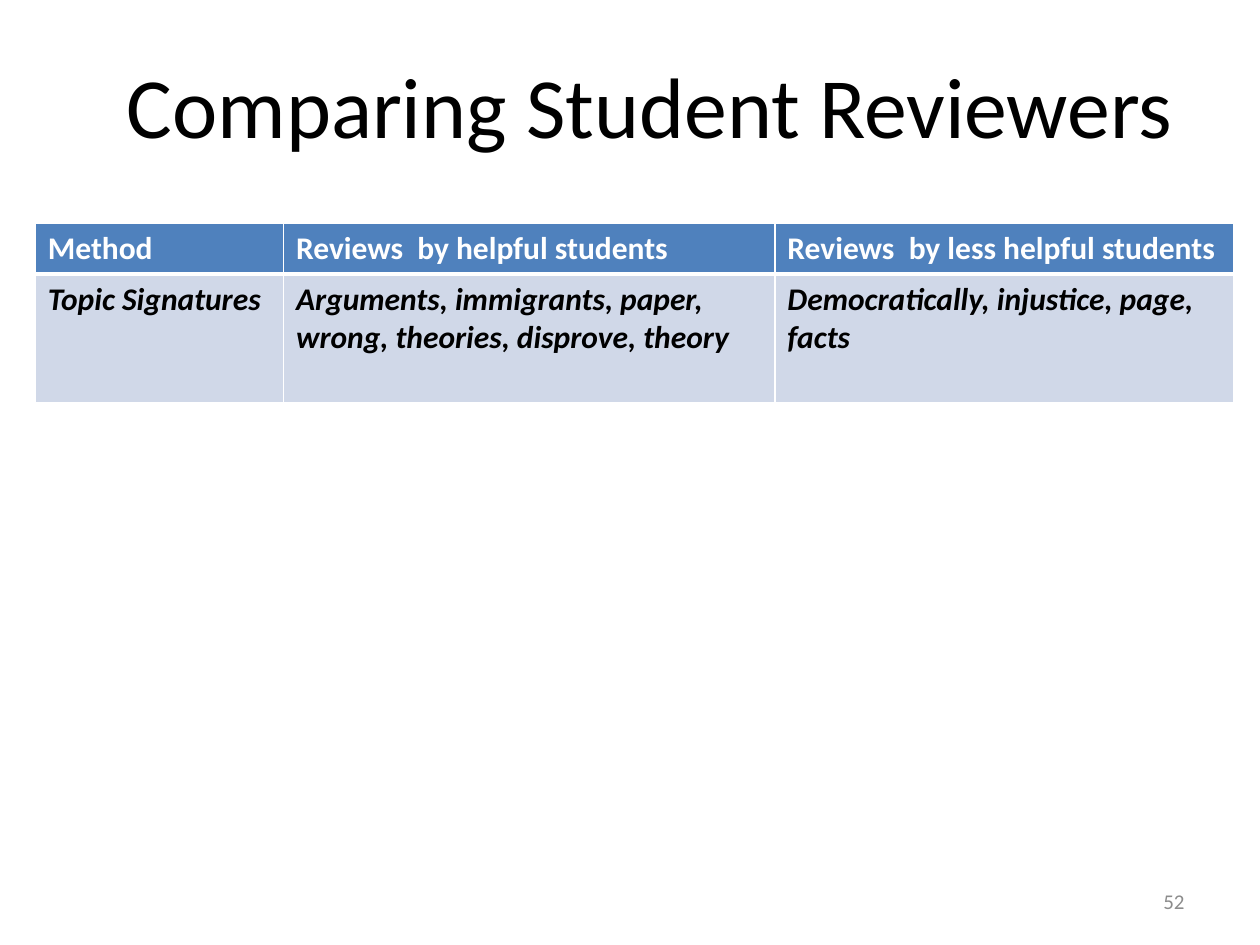
from dataclasses import dataclass

from lxml.etree import SubElement
from pptx import Presentation
from pptx.dml.color import RGBColor
from pptx.enum.text import MSO_ANCHOR, PP_ALIGN
from pptx.oxml.ns import qn
from pptx.util import Inches, Pt


@dataclass(frozen=True)
class Theme:
    font: str = "Calibri"
    ink: str = "000000"
    white: str = "FFFFFF"
    grey: str = "8C8C8C"
    head: str = "4F81BD"
    band: str = "D0D8E8"
    title: int = 49
    body: int = 18
    small: int = 12


THEME = Theme()
COLS = [1.97, 3.9, 3.64]
ROWS = [0.39, 1.02]
CELLS = [
    ["Method", "Reviews  by helpful students", "Reviews  by less helpful students"],
    ["Topic Signatures",
     "Arguments, immigrants, paper, wrong, theories, disprove, theory",
     "Democratically, injustice, page, facts"],
]


def write(frame, text, size=THEME.body, color=THEME.ink, bold=False,
          italic=False, align=PP_ALIGN.LEFT, anchor=MSO_ANCHOR.TOP):
    """Fill a text frame with one formatted paragraph."""
    frame.word_wrap = True
    frame.vertical_anchor = anchor
    par = frame.paragraphs[0]
    par.alignment = align
    run = par.add_run()
    run.text = text
    font = run.font
    font.name, font.size = THEME.font, Pt(size)
    font.bold, font.italic = bold, italic
    font.color.rgb = RGBColor.from_string(color)


def edge(cell, **widths):
    """Draw white cell borders; call before the cell is filled."""
    props = cell._tc.get_or_add_tcPr()
    for side, width in widths.items():
        line = SubElement(props, qn(f"a:ln{side}"), w=str(Pt(width)))
        fill = SubElement(line, qn("a:solidFill"))
        SubElement(fill, qn("a:srgbClr"), val=THEME.white)


def add_title(slide, box):
    title = slide.shapes.title
    title.left, title.top, title.width, title.height = map(Inches, box)
    write(title.text_frame, "Comparing Student Reviewers", size=THEME.title,
          align=PP_ALIGN.CENTER, anchor=MSO_ANCHOR.MIDDLE)


def add_grid(slide, box):
    table = slide.shapes.add_table(len(ROWS), len(COLS), *map(Inches, box)).table
    for col, width in zip(table.columns, COLS):
        col.width = Inches(width)
    for r, (height, texts) in enumerate(zip(ROWS, CELLS)):
        table.rows[r].height = Inches(height)
        head = r == 0
        for c, text in enumerate(texts):
            cell = table.cell(r, c)
            # A thick rule parts the header from the body
            edge(cell, L=1, R=1, T=1 if head else 3, B=3 if head else 1)
            cell.fill.solid()
            cell.fill.fore_color.rgb = RGBColor.from_string(
                THEME.head if head else THEME.band)
            write(cell.text_frame, text, bold=True, italic=not head,
                  color=THEME.white if head else THEME.ink)


def add_number(slide, box):
    frame = slide.shapes.add_textbox(*map(Inches, box)).text_frame
    write(frame, "52", size=THEME.small, color=THEME.grey,
          align=PP_ALIGN.RIGHT, anchor=MSO_ANCHOR.MIDDLE)


def main():
    deck = Presentation()
    deck.slide_width, deck.slide_height = Inches(10), Inches(7.5)
    slide = deck.slides.add_slide(deck.slide_layouts[5])
    add_title(slide, (0.53, 0.2, 9.25, 1.25))
    add_grid(slide, (0.28, 1.77, sum(COLS), sum(ROWS)))
    add_number(slide, (7.17, 6.95, 2.33, 0.4))
    deck.save("out.pptx")


if __name__ == "__main__":
    main()
